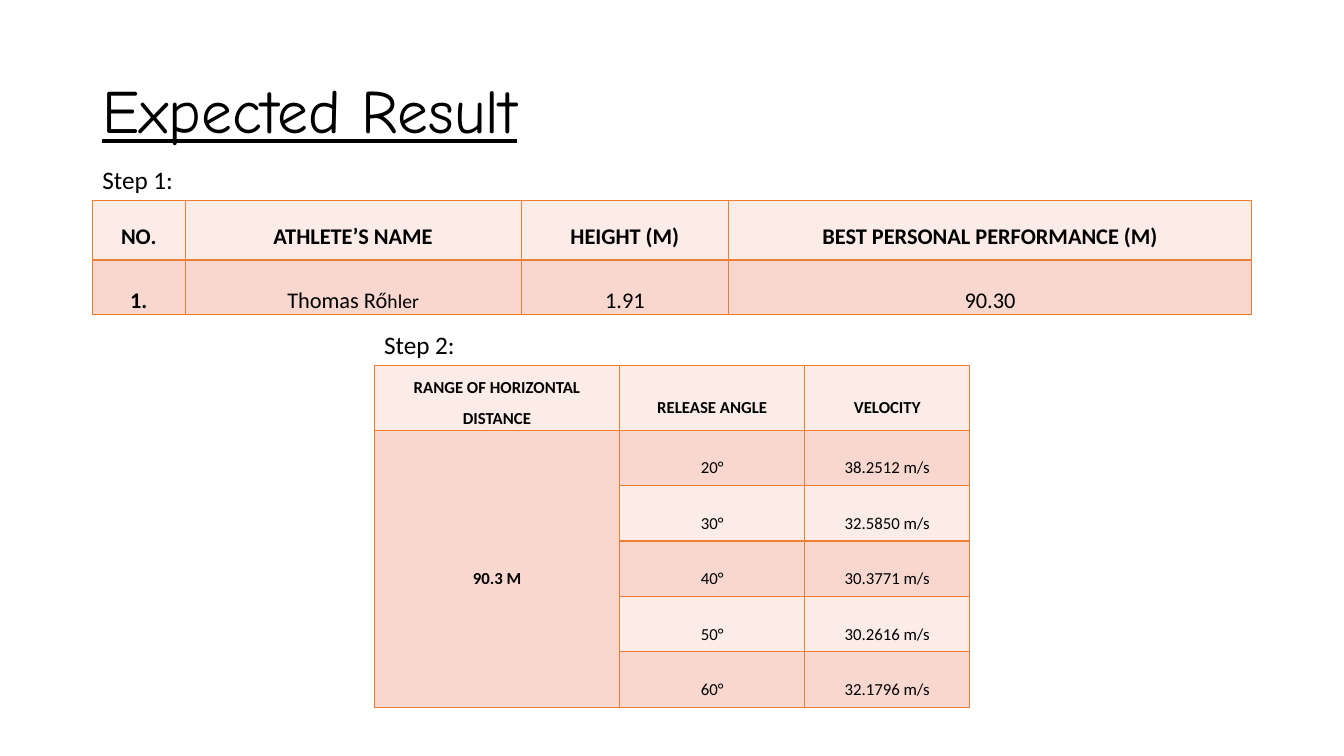
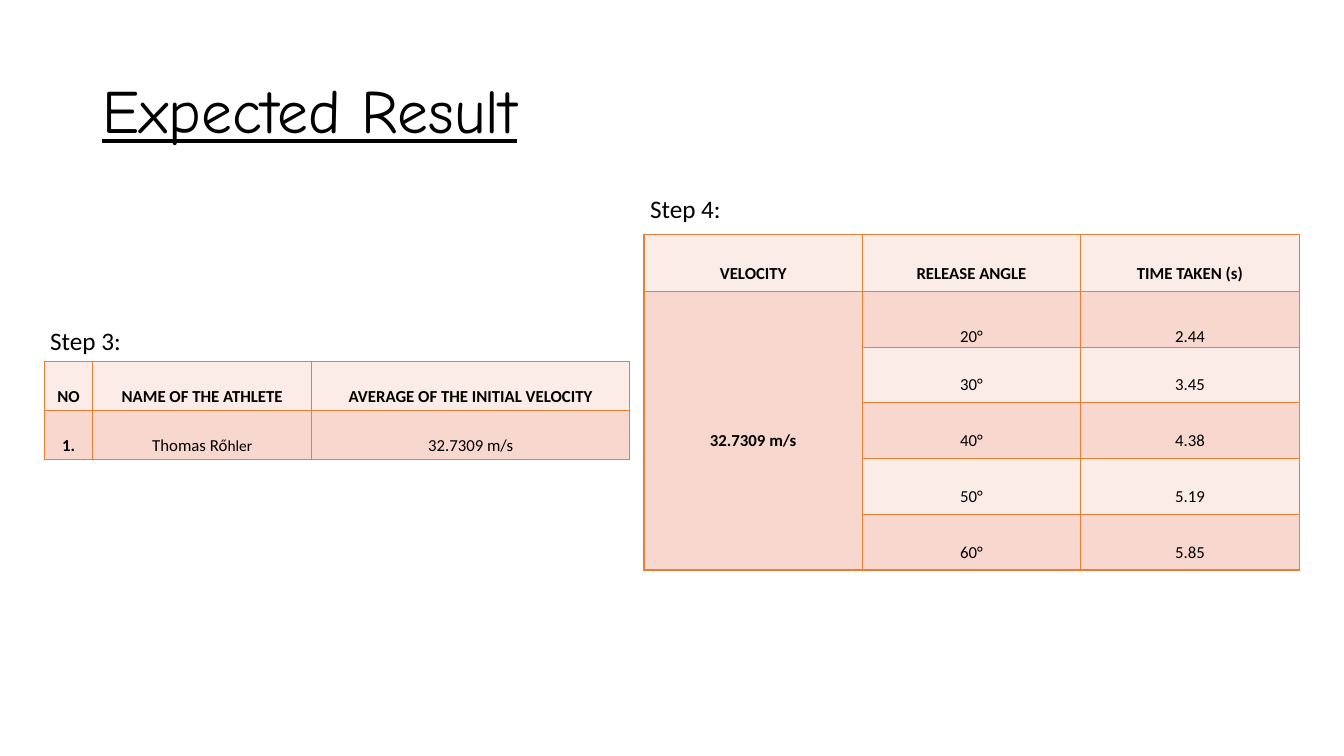
from pptx import Presentation
from pptx.dml.color import RGBColor
from pptx.enum.text import MSO_ANCHOR, MSO_AUTO_SIZE, PP_ALIGN
from pptx.oxml import parse_xml
from pptx.oxml.ns import nsdecls
from pptx.util import Pt

LEFT, CENTER = PP_ALIGN.LEFT, PP_ALIGN.CENTER
TOP, MIDDLE, BOTTOM = MSO_ANCHOR.TOP, MSO_ANCHOR.MIDDLE, MSO_ANCHOR.BOTTOM
NO_FIT, GROW = MSO_AUTO_SIZE.NONE, MSO_AUTO_SIZE.SHAPE_TO_FIT_TEXT
TITLE_ONLY = 5

ANGLES = ["20°", "30°", "40°", "50°", "60°"]


def color(hex_string):
    return RGBColor.from_string(hex_string)


class Deck:
    """The shared style and the slide being filled."""
    TITLE_FONT, TEXT_FONT = "Comic Neue", "Calibri"
    TEXT, BORDER = "000000", "ED7D31"
    BANDS = "FCECE8", "F8D7CE"

    def __init__(self):
        self.presentation = Presentation()
        self.presentation.slide_width = Pt(960)
        self.presentation.slide_height = Pt(540)

    def add_slide(self, title):
        layout = self.presentation.slide_layouts[TITLE_ONLY]
        self.slide = self.presentation.slides.add_slide(layout)
        shape = self.slide.shapes.title
        shape.left, shape.top = Pt(66), Pt(28.75)
        shape.width, shape.height = Pt(828), Pt(104.5)
        frame = shape.text_frame
        frame.auto_size, frame.vertical_anchor = NO_FIT, MIDDLE
        paragraph = frame.paragraphs[0]
        paragraph.alignment, paragraph.line_spacing = LEFT, 0.9
        run = self.add_run(paragraph, title, 44, font=self.TITLE_FONT)
        run.font.underline = True

    def add_run(self, paragraph, text, size, bold=False, font=TEXT_FONT):
        run = paragraph.add_run()
        run.text = text
        run.font.name, run.font.size, run.font.bold = font, Pt(size), bold
        run.font.color.rgb = color(self.TEXT)
        return run

    def add_label(self, left, top, text):
        shape = self.slide.shapes.add_textbox(Pt(left), Pt(top), Pt(237), Pt(29))
        frame = shape.text_frame
        frame.word_wrap, frame.auto_size = True, GROW
        self.add_run(frame.paragraphs[0], text, 18)

    def add_table(self, left, top, widths, heights, rows, size):
        """Rows hold strings, lists of (text, size) runs, or None below a merged cell."""
        table = self.slide.shapes.add_table(
            len(rows), len(widths), Pt(left), Pt(top),
            Pt(sum(widths)), Pt(sum(heights))).table
        table.first_row = table.horz_banding = False
        for column, width in zip(table.columns, widths):
            column.width = Pt(width)
        for row, height in zip(table.rows, heights):
            row.height = Pt(height)
        for i, values in enumerate(rows):
            for j, value in enumerate(values):
                self.fill_cell(table.cell(i, j), value, size,
                               bold=i == 0 or j == 0, band=self.BANDS[i % 2])
        if rows[-1][0] is None:
            table.cell(1, 0).merge(table.cell(len(rows) - 1, 0))
        return table

    def fill_cell(self, cell, value, size, bold, band):
        properties = cell._tc.get_or_add_tcPr()
        for side in "LRTB":
            properties.append(parse_xml(
                f'<a:ln{side} {nsdecls("a")} w="12700"><a:solidFill>'
                f'<a:srgbClr val="{self.BORDER}"/></a:solidFill></a:ln{side}>'))
        cell.fill.solid()
        cell.fill.fore_color.rgb = color(band)
        cell.margin_left = cell.margin_right = Pt(5)
        cell.margin_top = cell.margin_bottom = 0
        cell.vertical_anchor = MIDDLE
        paragraph = cell.text_frame.paragraphs[0]
        paragraph.alignment, paragraph.line_spacing = CENTER, 2
        if value is None:
            return
        runs = [(value, size)] if isinstance(value, str) else value
        for text, run_size in runs:
            self.add_run(paragraph, text, run_size, bold)


def angle_rows(header, merged_value, results):
    """A header, then one row per angle beside a merged first column."""
    firsts = [merged_value] + [None] * (len(ANGLES) - 1)
    return [header, *zip(firsts, ANGLES, results)]


def add_distance_slide(deck):
    deck.add_slide("Expected Result")

    # Step 1: the athlete
    athlete = deck.add_table(
        66, 143.25, [66.25, 240, 148.25, 373.5], [42.5, 36.75],
        [["NO.", "ATHLETE’S NAME", "HEIGHT (M)", "BEST PERSONAL PERFORMANCE (M)"],
         ["1.", [("Thomas Rő", 16), ("hler", 14)], "1.91", "90.30"]], 16)
    for header, value in zip(athlete.rows[0].cells, athlete.rows[1].cells):
        header.text_frame.paragraphs[0].line_spacing = 1.5
        value.vertical_anchor = TOP

    # Step 2: velocity for each angle
    velocity = deck.add_table(
        267.25, 261.25, [175.5, 132, 118], [46] + [39.6] * len(ANGLES),
        angle_rows(["RANGE OF HORIZONTAL DISTANCE", "RELEASE ANGLE", "VELOCITY"], "90.3 M",
                   ["38.2512 m/s", "32.5850 m/s", "30.3771 m/s", "30.2616 m/s", "32.1796 m/s"]),
        12)
    velocity.cell(0, 0).text_frame.paragraphs[0].line_spacing = 1.5

    deck.add_label(66, 113.75, "Step 1:")
    deck.add_label(267.25, 232, "Step 2:")


def add_time_slide(deck):
    deck.add_slide("Expected Result")

    # Step 4: time for each angle
    deck.add_label(457.25, 134.75, "Step 4:")
    time = deck.add_table(
        460, 167.75, [156] * 3, [40.4] + [39.8] * len(ANGLES),
        angle_rows(["VELOCITY", "RELEASE ANGLE", "TIME TAKEN (s)"], "32.7309 m/s",
                   ["2.44", "3.45", "4.38", "5.19", "5.85"]), 12)
    for column in (1, 2):
        time.cell(1, column).vertical_anchor = BOTTOM

    # Step 3: average velocity
    deck.add_table(
        31.75, 258.5, [34.5, 156.5, 227], [35] * 2,
        [["NO", "NAME OF THE ATHLETE", "AVERAGE OF THE INITIAL VELOCITY"],
         ["1.", [("Thomas Rő", 12), ("hler", 11)], "32.7309 m/s"]], 12)
    deck.add_label(28.75, 229, "Step 3:")


def main():
    deck = Deck()
    add_distance_slide(deck)
    add_time_slide(deck)
    deck.presentation.save("out.pptx")


if __name__ == "__main__":
    main()
